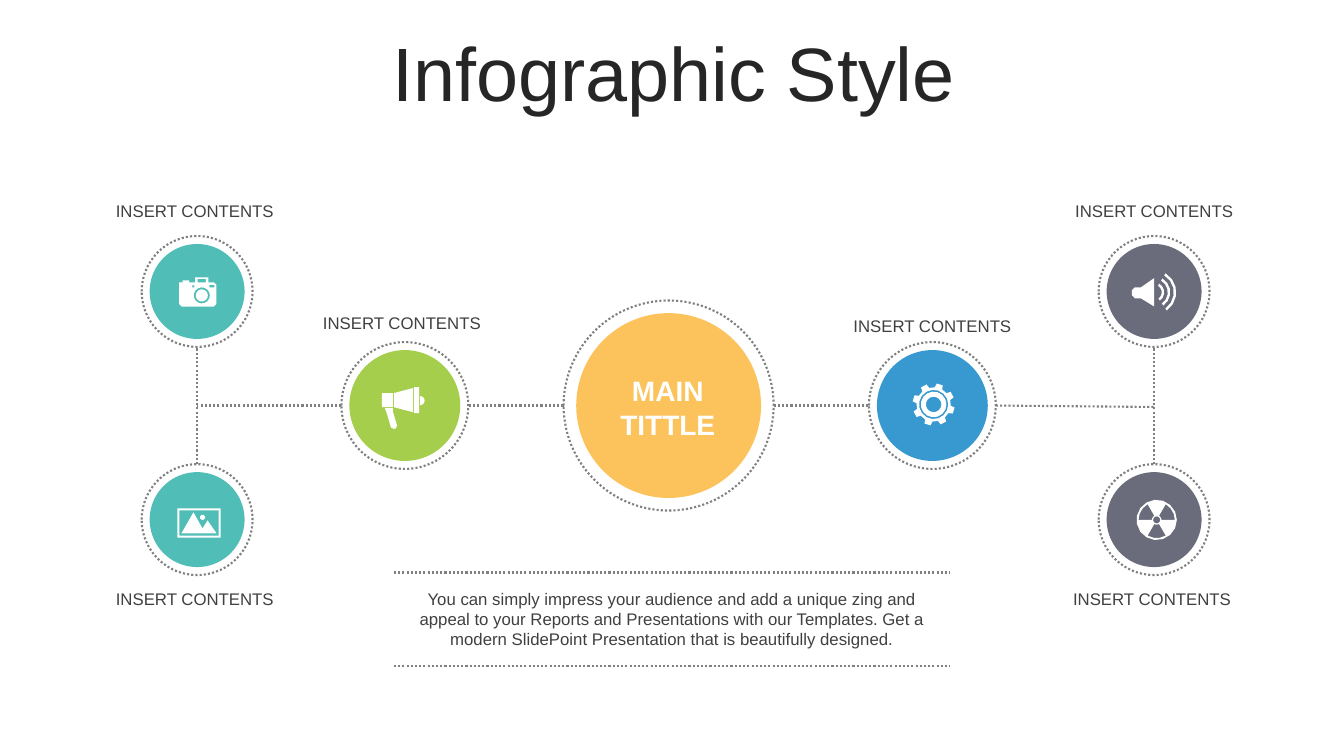
from math import cos, radians, sin

from lxml.etree import SubElement
from pptx import Presentation
from pptx.dml.color import RGBColor
from pptx.enum.dml import MSO_LINE_DASH_STYLE as Dash
from pptx.enum.shapes import MSO_CONNECTOR_TYPE as Connector, MSO_SHAPE as Shape
from pptx.enum.text import MSO_ANCHOR as Anchor, MSO_AUTO_SIZE as AutoSize, PP_ALIGN as Align
from pptx.oxml.ns import qn
from pptx.util import Inches, Pt


def color(value):
    return RGBColor.from_string(value)


# Outlines for the icons: hundredths of an inch from the icon's centre
def arc(radius, start=0, end=360, x=0, y=0):
    steps = max(3, round(abs(end - start) / 24))
    angles = [radians(start + (end - start) * i / steps) for i in range(steps + 1)]
    return [(x + radius * cos(a), y + radius * sin(a)) for a in angles]


def circle(radius, x=0, y=0):
    return arc(radius, x=x, y=y)[:-1]


def band(inner, outer, start, end):
    return arc(outer, start, end) + arc(inner, end, start)


def rect(left, top, right, bottom):
    return [(left, top), (right, top), (right, bottom), (left, bottom)]


def gear_rim(teeth=8, first=-73):
    rim = []
    for tooth in range(teeth):
        middle = first + tooth * 360 / teeth
        for radius, turn in ((17, -13), (21, -8.5), (21, 8.5), (17, 13)):
            angle = radians(middle + turn)
            rim.append((radius * cos(angle), radius * sin(angle)))
    return rim


CAMERA = [
    [(-18.5, -9.5), (-15, -9.5), (-15, -11.5), (-8.5, -11.5), (-8.5, -9.5),
     (-2.5, -9.5), (-2.5, -14.5), (10.5, -14.5), (10.5, -9.5), (16, -9.5),
     (18.5, -7), (18.5, 12), (16, 14.5), (-16, 14.5), (-18.5, 12)],
    circle(8, x=4, y=3.5), circle(6, x=4, y=3.5),
    rect(-5.5, -6.5, -3.5, -4.5), rect(11.5, -7, 16.5, -4.5), rect(0, -13, 8, -9.5)]
LANDSCAPE = [
    rect(-21.5, -14.5, 21.5, 14.5), rect(-19.5, -12.5, 19.5, 12.5),
    [(-5.5, -10.5), (3.5, 5.5), (8.5, -2.5), (17.5, 10.5), (-17.5, 10.5)],
    circle(2.5, x=3.5, y=-5.5)]
MEGAPHONE = [
    rect(-22, -15, -11, -1), [(9, -20), (9, 4), (-10, -1), (-10, -15)],
    rect(10, -21, 15, 5), arc(4.5, -90, 90, x=16, y=-7.5),
    [(-19, 0), (-11, 0), (-11, 3), (-7, 17), (-8, 20),
     (-10, 20.5), (-13, 19), (-17, 5)]]
SPEAKER = [
    [(0, -14), (0, 14), (-13, 6), (-19, 6), (-22, 3), (-22, -2), (-19, -5), (-13, -5)],
    *[band(radius - 2.4, radius, -59, 55) for radius in (10, 16, 22)]]
RADIATION = [
    circle(20), circle(3.5), *[band(4.7, 18, start, start + 60) for start in (60, 180, 300)]]
GEAR = [gear_rim(), circle(14.5), circle(12.7), circle(7.7)]


class Board:
    """Draws on a page with a grid of 160 columns by 90 rows."""
    cell = Inches(1 / 12)
    font, dark, gray, white = "Arial", "262626", "404040", "FFFFFF"
    dots = "808080"

    def __init__(self, deck):
        deck.slide_width, deck.slide_height = 160 * self.cell, 90 * self.cell
        self.page = deck.slides.add_slide(deck.slide_layouts[6])

    def grid(self, *counts):
        return [round(count * self.cell) for count in counts]

    def dotted(self, line):
        line.color.rgb = color(self.dots)
        line.width = Pt(1.5)
        line.dash_style = Dash.ROUND_DOT

    def oval(self, col, row, size):
        shape = self.page.shapes.add_shape(
            Shape.OVAL, *self.grid(col - size / 2, row - size / 2, size, size))
        shape.shadow.inherit = False
        return shape

    def node(self, col, row, disc_size, ring_size, fill, opacity):
        disc = self.oval(col, row, disc_size)
        disc.fill.solid()
        disc.fill.fore_color.rgb = color(fill)
        disc.line.fill.background()
        tint = disc.fill._xPr.find(qn("a:solidFill"))[0]
        SubElement(tint, qn("a:alpha")).set("val", str(opacity * 1000))
        ring = self.oval(col, row, ring_size)
        ring.fill.background()
        self.dotted(ring.line)

    def line(self, *ends):
        link = self.page.shapes.add_connector(Connector.STRAIGHT, *self.grid(*ends))
        self.dotted(link.line)
        SubElement(link._element.spPr, qn("a:effectLst"))

    def text(self, col, row, cols, rows, lines, size, ink, bold=False, wrap=True):
        box = self.page.shapes.add_textbox(*self.grid(col, row, cols, rows))
        frame = box.text_frame
        frame.word_wrap = wrap
        frame.auto_size = AutoSize.SHAPE_TO_FIT_TEXT
        frame.text = lines
        for para in frame.paragraphs:
            para.alignment = Align.CENTER
            para.font.name, para.font.size, para.font.bold = self.font, Pt(size), bold
            para.font.color.rgb = color(ink)
        return frame

    def label(self, col, row):
        self.text(col - 10.75, row, 21.5, 3.6, "INSERT CONTENTS", 12, self.gray, wrap=False)

    def icon(self, col, row, outlines):
        left, top = self.grid(col, row)
        paths = [[(left + Inches(x / 100), top + Inches(y / 100)) for x, y in outline]
                 for outline in outlines]
        builder = self.page.shapes.build_freeform(*paths[0][0])
        for number, points in enumerate(paths):
            if number:
                builder.move_to(*points[0])
            builder.add_line_segments(points[1:], close=True)
        shape = builder.convert_to_shape()
        shape.shadow.inherit = False
        shape.fill.solid()
        shape.fill.fore_color.rgb = color(self.white)
        shape.line.fill.background()


def main():
    deck = Presentation()
    board = Board(deck)

    # Title
    title = board.text(4.2, 4.4, 152, 9.5, "Infographic Style", 54, board.dark)
    title.auto_size = AutoSize.NONE
    title.vertical_anchor = Anchor.MIDDLE
    title.paragraphs[0].line_spacing = 0.9
    title.paragraphs[0].space_before = Pt(10)

    # Circles
    axis, middle, reach = 48.28, 79.6, 13.58
    inner_cols, outer_cols = (48.2, 111), (23.47, 137.4)
    main_ring, inner_ring, outer_ring = 25, 15.1, 13.2
    top, bottom = axis - reach, axis + reach
    board.node(middle, axis, 22, main_ring, "FBA200", 64)
    for col, fill in zip(inner_cols, ("90C221", "0680C3")):
        board.node(col, axis, 13.2, inner_ring, fill, 80)
    for col, fill in zip(outer_cols, ("07A398", "2C2F45")):
        for row in (top, bottom):
            board.node(col, row, 11.3, outer_ring, fill, 70)

    # Dotted links on both sides
    for side, inner, outer, end_row in zip((-1, 1), inner_cols, outer_cols, (axis, 48.45)):
        board.line(middle + side * main_ring / 2, axis, inner - side * inner_ring / 2, axis)
        board.line(inner + side * inner_ring / 2, axis, outer, end_row)
        board.line(outer, bottom - outer_ring / 2, outer, top + outer_ring / 2)

    # Texts
    board.text(70.1, 43.9, 18.8, 9.3, "MAIN\nTITTLE", 20, board.white, bold=True)
    for col, row in ((23.2, 23.3), (23.2, 69.55), (47.85, 36.6),
                     (111, 37), (137.4, 23.3), (137.15, 69.55)):
        board.label(col, row)
    board.text(46.5, 69.5, 67, 8.5,
               "You can simply impress your audience and add a unique zing and appeal to "
               "your Reports and Presentations with our Templates. Get a modern SlidePoint "
               "Presentation that is beautifully designed.", 12, board.gray)
    for row in (68.15, 79.25):
        board.line(46.9, row, 113.1, row)

    # Icons
    for col, row, outlines in (
            (23.55, 34.75, CAMERA), (23.7, 62.25, LANDSCAPE), (48.1, 48.6, MEGAPHONE),
            (111.15, 48.15, GEAR), (137.4, 34.8, SPEAKER), (137.7, 61.9, RADIATION)):
        board.icon(col, row, outlines)

    deck.save("out.pptx")


if __name__ == "__main__":
    main()
